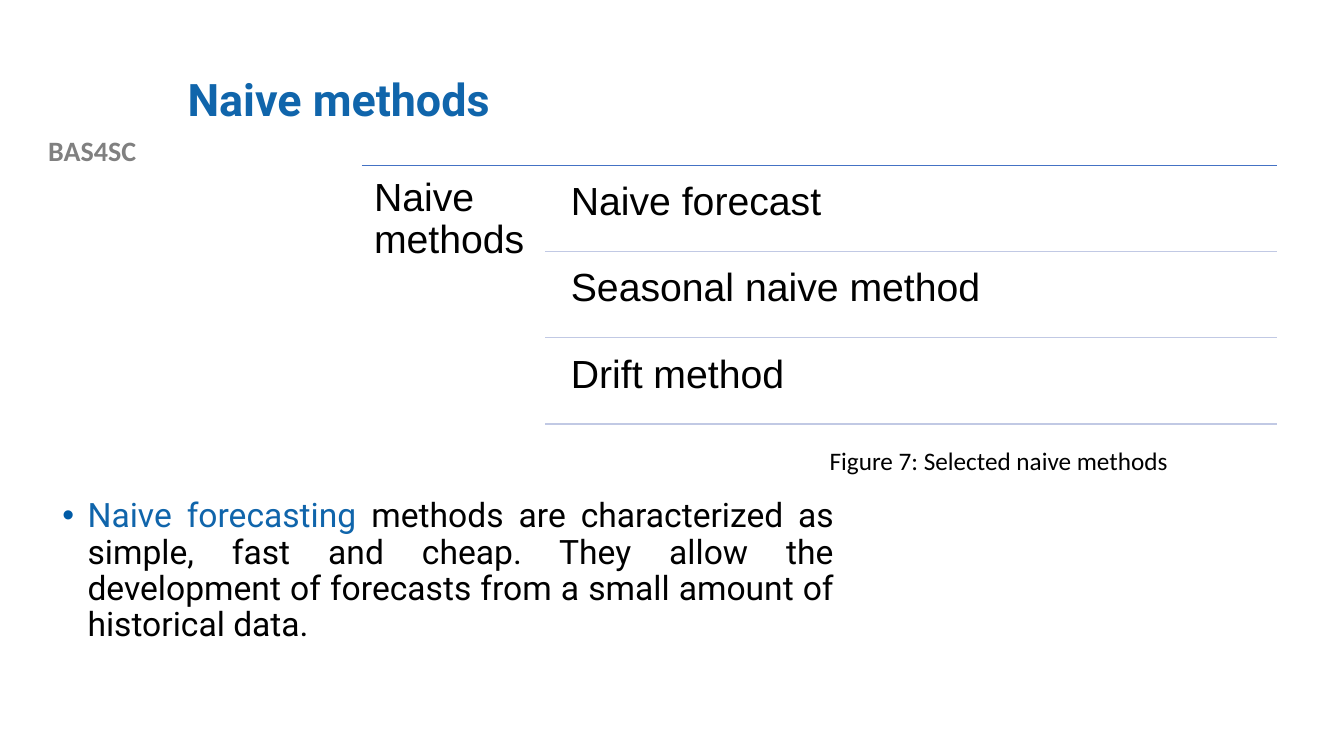
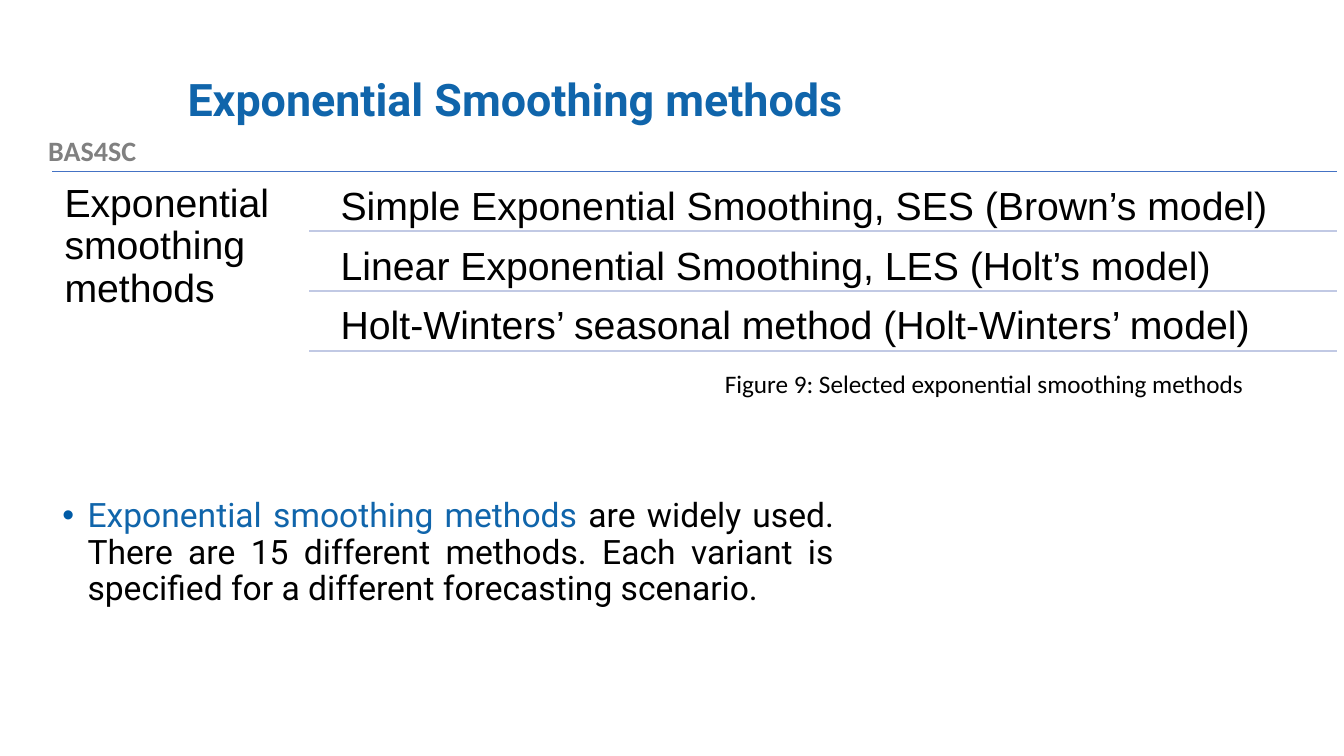
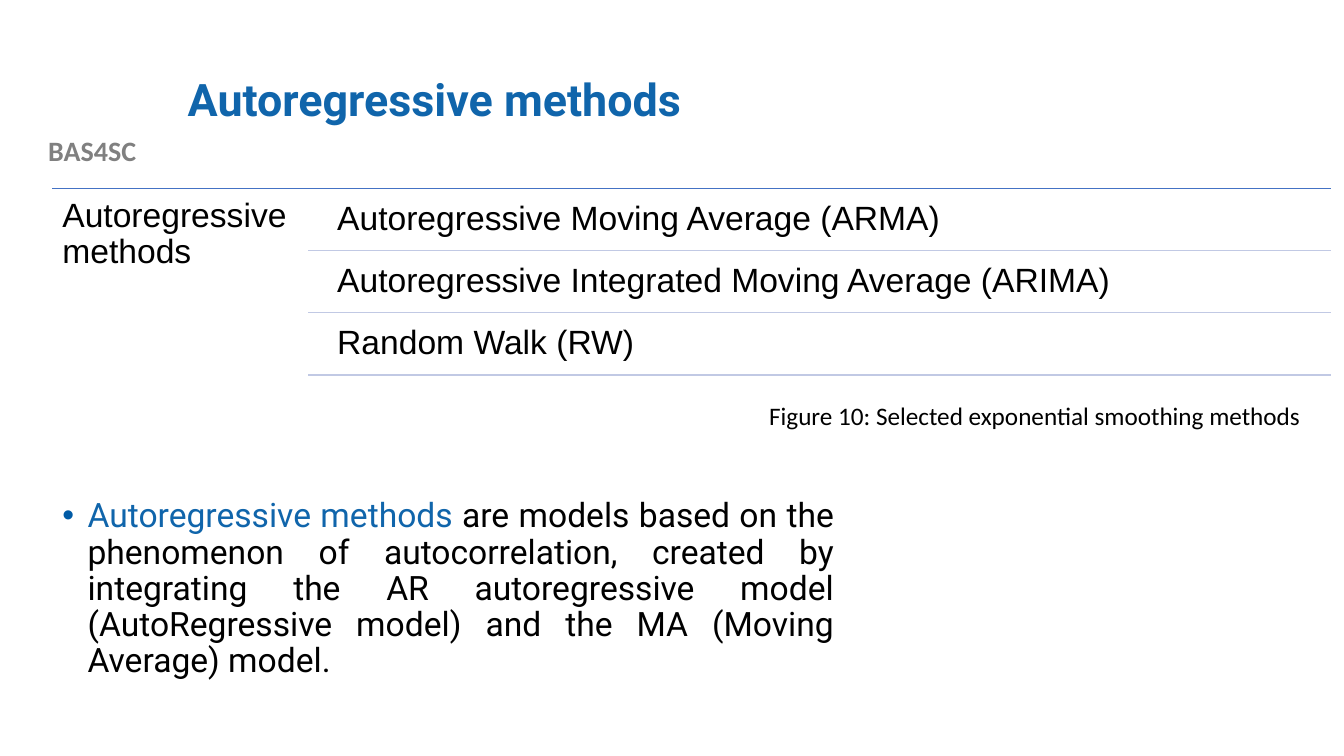
from lxml import etree
from pptx import Presentation
from pptx.dml.color import RGBColor
from pptx.enum.shapes import MSO_CONNECTOR
from pptx.enum.text import MSO_ANCHOR, PP_ALIGN
from pptx.oxml.ns import qn
from pptx.util import Inches, Pt

LEFT, CENTER, JUSTIFY = PP_ALIGN.LEFT, PP_ALIGN.CENTER, PP_ALIGN.JUSTIFY
TOP, MIDDLE = MSO_ANCHOR.TOP, MSO_ANCHOR.MIDDLE
STRAIGHT = MSO_CONNECTOR.STRAIGHT

COLORS = {
    "title": "1065AB",
    "bullet": "015BA6",
    "text": "000000",
    "label": "808080",
    "top_rule": "4472C4",
    "row_rule": "C1C9E4",
}
LABEL_SHARE = 0.2    # label column, as a share of the list width
INDENT_SHARE = 0.015  # gap between label column and row text
PAD_SHARE = 0.05     # gap above row text, as a share of the row pitch

SLIDES = [
    {
        "title": "Naive methods",
        "tree": {
            "label": "Naive methods",
            "rows": ["Naive forecast", "Seasonal naive method", "Drift method"],
            "box": (3.59, 1.64, 9.08, 2.61), "size": 28, "inset": 0.12,
        },
        "caption": ("Figure 7: Selected naive methods", 8.13, 4.37, 3.62),
        "body": (
            "Naive forecasting ",
            "methods are characterized as simple, fast and cheap. They allow the "
            "development of forecasts from a small amount of historical data.",
        ),
    },
    {
        "title": "Exponential Smoothing methods",
        "tree": {
            "label": "Exponential smoothing methods",
            "rows": [
                "Simple Exponential Smoothing, SES (Brown’s model)",
                "Linear Exponential Smoothing, LES (Holt’s model)",
                "Holt-Winters’ seasonal method (Holt-Winters’ model)",
            ],
            "box": (0.52, 1.7, 12.74, 1.81), "size": 28, "inset": 0.12,
        },
        "caption": ("Figure 9: Selected exponential smoothing methods", 7.09, 3.61, 5.8),
        "body": (
            "Exponential smoothing methods ",
            "are widely used. There are 15 different methods. Each variant is "
            "specified for a different forecasting scenario.",
        ),
    },
    {
        "title": "Autoregressive methods",
        "tree": {
            "label": "Autoregressive methods",
            "rows": [
                "Autoregressive Moving Average (ARMA)",
                "Autoregressive Integrated Moving Average (ARIMA)",
                "Random Walk (RW)",
            ],
            "box": (0.52, 1.87, 12.68, 1.88), "size": 24, "inset": 0.1,
        },
        "caption": ("Figure 10: Selected exponential smoothing methods", 7.53, 3.92, 5.8),
        "body": (
            "Autoregressive methods ",
            "are models based on the phenomenon of autocorrelation, created by "
            "integrating the AR autoregressive model (AutoRegressive model) and "
            "the MA (Moving Average) model.",
        ),
    },
]


def add_bullet(p, char, color, indent):
    pPr = p._p.get_or_add_pPr()
    pPr.set("marL", str(Inches(indent)))
    pPr.set("indent", str(-Inches(indent)))
    clr = etree.SubElement(pPr, qn("a:buClr"))
    etree.SubElement(clr, qn("a:srgbClr")).set("val", COLORS[color])
    etree.SubElement(pPr, qn("a:buFont")).set("typeface", "Arial")
    etree.SubElement(pPr, qn("a:buChar")).set("char", char)


def write(sp, *runs, font, size, bold=False, align=LEFT, anchor=TOP,
          spacing=1.0, insets=(0.1, 0.05), bullet=None):
    """Fill a shape with one paragraph made of (text, colour name) runs."""
    tf = sp.text_frame
    tf.word_wrap = True
    tf.vertical_anchor = anchor
    tf.margin_left = tf.margin_right = Inches(insets[0])
    tf.margin_top = tf.margin_bottom = Inches(insets[1])
    p = tf.paragraphs[0]
    p.alignment = align
    p.line_spacing = spacing
    if bullet:
        add_bullet(p, bullet, "bullet", 0.25)
    for text, color in runs:
        r = p.add_run()
        r.text = text
        r.font.name = font
        r.font.size = Pt(size)
        r.font.bold = bold
        r.font.color.rgb = RGBColor.from_string(COLORS[color])


def add_text(s, box, *runs, **fmt):
    write(s.shapes.add_textbox(*map(Inches, box)), *runs, **fmt)


def add_rule(s, left, right, y, color):
    line = s.shapes.add_connector(
        STRAIGHT, Inches(left), Inches(y), Inches(right), Inches(y))
    line.line.color.rgb = RGBColor.from_string(COLORS[color])
    line.line.width = Pt(1)
    etree.SubElement(line._element.spPr, qn("a:effectLst"))


def add_title(s, text):
    sp = s.shapes.title
    sp.left, sp.top, sp.width, sp.height = map(Inches, (1.76, 0.4, 10.66, 1.22))
    write(sp, (text, "title"), font="Roboto", size=32, bold=True,
          anchor=MIDDLE, spacing=0.9)


def add_tree(s, label, rows, box, size, inset):
    """Draw a label column beside ruled rows of equal height."""
    left, top, width, height = box
    right = left + width
    split = left + width * LABEL_SHARE
    row_left = split + width * INDENT_SHARE
    pitch = height / (len(rows) + PAD_SHARE)
    pad = pitch * PAD_SHARE
    fmt = {"font": "Arial", "size": size, "spacing": 0.9, "insets": (inset, inset)}

    add_rule(s, left, right, top, "top_rule")
    add_text(s, (left, top, split - left, height), (label, "text"), **fmt)
    for i, text in enumerate(rows):
        y = top + i * pitch
        add_text(s, (row_left, y + pad, right - row_left, pitch - pad),
                 (text, "text"), **fmt)
        add_rule(s, split, right, y + pitch, "row_rule")


def add_slide(prs, title, tree, caption, body):
    s = prs.slides.add_slide(prs.slide_layouts[5])
    add_text(s, (0, 1.28, 1.83, 0.44), ("BAS4SC", "label"),
             font="Calibri", size=20, bold=True, align=CENTER)
    add_title(s, title)
    add_tree(s, **tree)
    text, left, top, width = caption
    add_text(s, (left, top, width, 0.4), (text, "text"), font="Calibri", size=18)
    term, rest = body
    add_text(s, (0.52, 4.9, 7.85, 2.2), (term, "title"), (rest, "text"),
             font="Roboto", size=24, align=JUSTIFY, spacing=0.9, bullet="•")


def main():
    prs = Presentation()
    prs.slide_width, prs.slide_height = Inches(13.33), Inches(7.5)
    for content in SLIDES:
        add_slide(prs, **content)
    prs.save("out.pptx")


if __name__ == "__main__":
    main()
